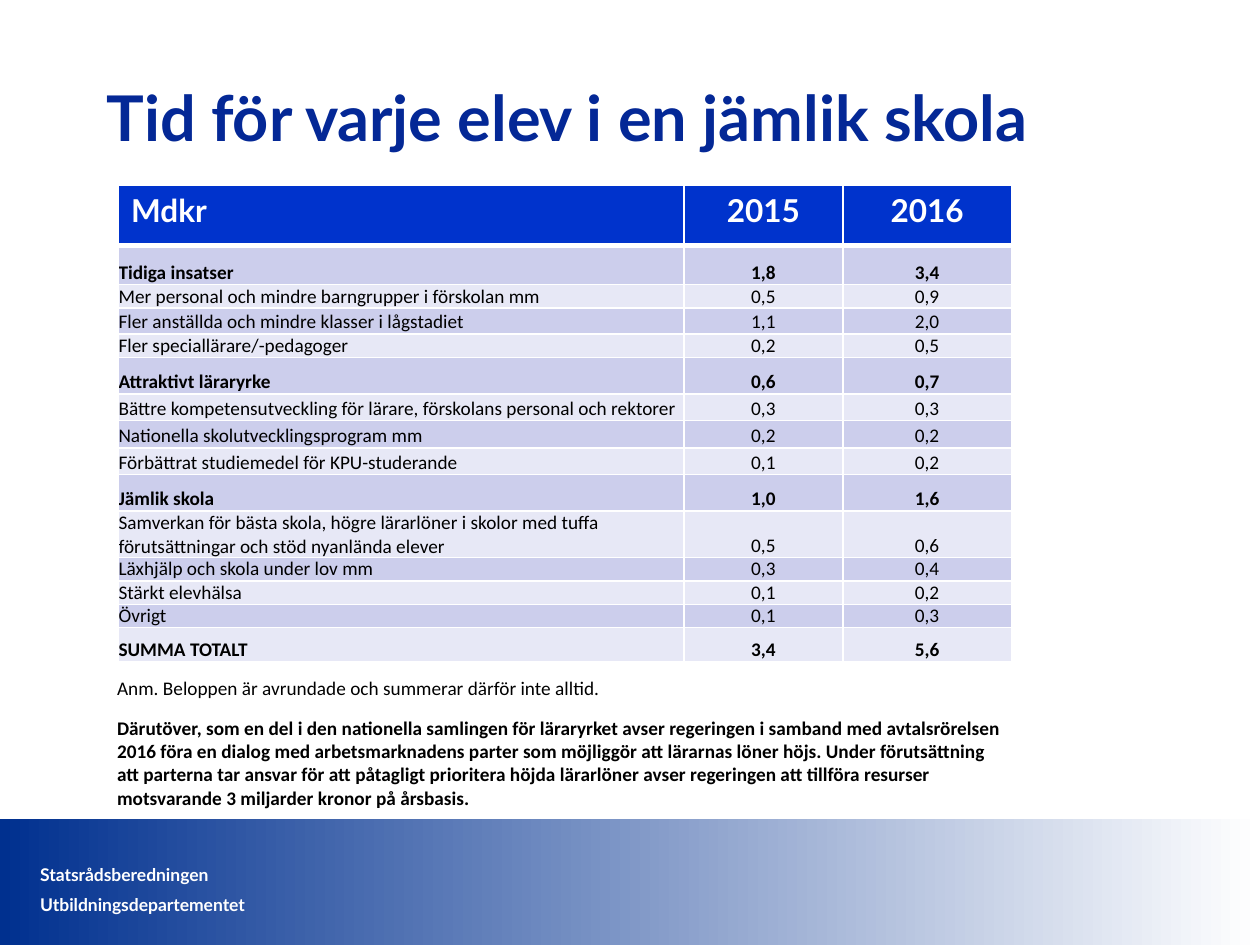
from typing import NamedTuple

from lxml.etree import SubElement
from pptx import Presentation
from pptx.dml.color import RGBColor
from pptx.enum.shapes import MSO_SHAPE as Shape
from pptx.enum.text import MSO_ANCHOR as Anchor, PP_ALIGN as Align
from pptx.oxml.ns import qn
from pptx.util import Cm, Pt

WHITE = RGBColor(0xFF, 0xFF, 0xFF)
BLACK = RGBColor(0x00, 0x00, 0x00)
TITLE_BLUE = RGBColor(0x04, 0x28, 0x96)
BAND_BLUE = RGBColor(0x00, 0x30, 0x8F)
HEADER_BLUE = RGBColor(0x00, 0x33, 0xCC)
ROW_FILLS = (RGBColor(0xCC, 0xCE, 0xEC), RGBColor(0xE7, 0xE8, 0xF6))
COLUMN_WIDTHS = (11.4, 3.2, 3.4)


class Row(NamedTuple):
    height: float
    label: str
    year_2015: str
    year_2016: str
    bold: bool = False


HEADER = Row(1.22, "Mdkr", "2015", "2016", True)
BODY = (
    Row(0.79, "Tidiga insatser", "1,8", "3,4", True),
    Row(0.46, "Mer personal och mindre barngrupper i förskolan mm", "0,5", "0,9"),
    Row(0.53, "Fler anställda och mindre klasser i lågstadiet", "1,1", "2,0"),
    Row(0.46, "Fler speciallärare/-pedagoger", "0,2", "0,5"),
    Row(0.74, "Attraktivt läraryrke", "0,6", "0,7", True),
    Row(0.53, "Bättre kompetensutveckling för lärare, förskolans personal och rektorer",
        "0,3", "0,3"),
    Row(0.56, "Nationella skolutvecklingsprogram mm", "0,2", "0,2"),
    Row(0.53, "Förbättrat studiemedel för KPU-studerande", "0,1", "0,2"),
    Row(0.74, "Jämlik skola", "1,0", "1,6", True),
    Row(0.58, "Samverkan för bästa skola, högre lärarlöner i skolor med tuffa "
        "förutsättningar och stöd nyanlända elever", "0,5", "0,6"),
    Row(0.48, "Läxhjälp och skola under lov mm", "0,3", "0,4"),
    Row(0.41, "Stärkt elevhälsa", "0,1", "0,2"),
    Row(0.41, "Övrigt", "0,1", "0,3"),
    Row(0.69, "SUMMA TOTALT", "3,4", "5,6", True),
)


def write(para, text: str, *, size: float, font: str = "Calibri",
          color: RGBColor = BLACK, bold: bool = False,
          align: Align = Align.LEFT, before: float = 0) -> None:
    para.alignment = align
    para.space_before = Pt(before)
    span = para.add_run()
    span.text = text
    span.font.size = Pt(size)
    span.font.name = font
    span.font.bold = bold
    span.font.color.rgb = color


def add_box(page, left: float, top: float, width: float, height: float,
            anchor: Anchor = Anchor.TOP):
    frame = page.shapes.add_textbox(Cm(left), Cm(top), Cm(width), Cm(height)).text_frame
    frame.word_wrap = True
    frame.vertical_anchor = anchor
    return frame


def set_borders(cell, top: float, bottom: float) -> None:
    properties = cell._tc.get_or_add_tcPr()
    widths = {"lnL": 1, "lnR": 1, "lnT": top, "lnB": bottom}
    for position, (tag, width) in enumerate(widths.items()):
        line = SubElement(properties, qn(f"a:{tag}"), w=str(Pt(width)))
        fill = SubElement(line, qn("a:solidFill"))
        SubElement(fill, qn("a:srgbClr"), val=str(WHITE))
        properties.insert(position, line)


def add_budget_table(page) -> None:
    rows = (HEADER, *BODY)
    table = page.shapes.add_table(len(rows), len(COLUMN_WIDTHS), Cm(2.39), Cm(3.73),
                                  Cm(sum(COLUMN_WIDTHS)), Cm(9.6)).table
    for column, width in zip(table.columns, COLUMN_WIDTHS):
        column.width = Cm(width)
    for r, row in enumerate(rows):
        table.rows[r].height = Cm(row.height)
        for c, text in enumerate((row.label, row.year_2015, row.year_2016)):
            cell = table.cell(r, c)
            align = Align.CENTER if c else Align.LEFT
            para = cell.text_frame.paragraphs[0]
            cell.fill.solid()
            if r == 0:
                cell.fill.fore_color.rgb = HEADER_BLUE
                write(para, text, size=18, font="Lato", color=WHITE, bold=True, align=align)
            else:
                cell.fill.fore_color.rgb = ROW_FILLS[(r - 1) % 2]
                cell.vertical_anchor = Anchor.BOTTOM
                cell.margin_left = cell.margin_right = 0
                cell.margin_top = cell.margin_bottom = 0
                write(para, text, size=11, bold=row.bold, align=align)
            set_borders(cell, top=3 if r == 1 else 1, bottom=3 if r == 0 else 1)


def add_footer(page) -> None:
    band = page.shapes.add_shape(Shape.RECTANGLE, 0, Cm(16.51), Cm(25.4), Cm(2.54))
    band.shadow.inherit = False
    band.line.fill.background()
    band.fill.gradient()
    band.fill.gradient_angle = 0
    for stop, color in zip(band.fill.gradient_stops, (BAND_BLUE, WHITE)):
        stop.color.rgb = color
    frame = add_box(page, 0.56, 17.25, 13.49, 1.32, Anchor.BOTTOM)
    style = dict(size=10, font="Lato", color=WHITE, bold=True)
    write(frame.paragraphs[0], "Statsrådsberedningen", **style)
    write(frame.add_paragraph(), "Utbildningsdepartementet", before=5, **style)


def main() -> None:
    deck = Presentation()
    deck.slide_width, deck.slide_height = Cm(25.4), Cm(19.05)
    page = deck.slides.add_slide(deck.slide_layouts[6])

    add_footer(page)

    # Title
    title = add_box(page, 1.9, 1.73, 19.2, 1.22, Anchor.MIDDLE)
    write(title.paragraphs[0], "Tid för varje elev i en jämlik skola",
          size=36, font="Lato", color=TITLE_BLUE, bold=True)

    add_budget_table(page)

    # Notes below the table
    notes = add_box(page, 2.11, 13.51, 18.39, 2.95)
    write(notes.paragraphs[0],
          "Anm. Beloppen är avrundade och summerar därför inte alltid.", size=11)
    write(notes.add_paragraph(),
          "Därutöver, som en del i den nationella samlingen för läraryrket avser regeringen "
          "i samband med avtalsrörelsen 2016 föra en dialog med arbetsmarknadens parter som "
          "möjliggör att lärarnas löner höjs. Under förutsättning att parterna tar ansvar för "
          "att påtagligt prioritera höjda lärarlöner avser regeringen att tillföra resurser "
          "motsvarande 3 miljarder kronor på årsbasis.", size=11, bold=True, before=9.75)

    deck.save("out.pptx")


if __name__ == "__main__":
    main()
